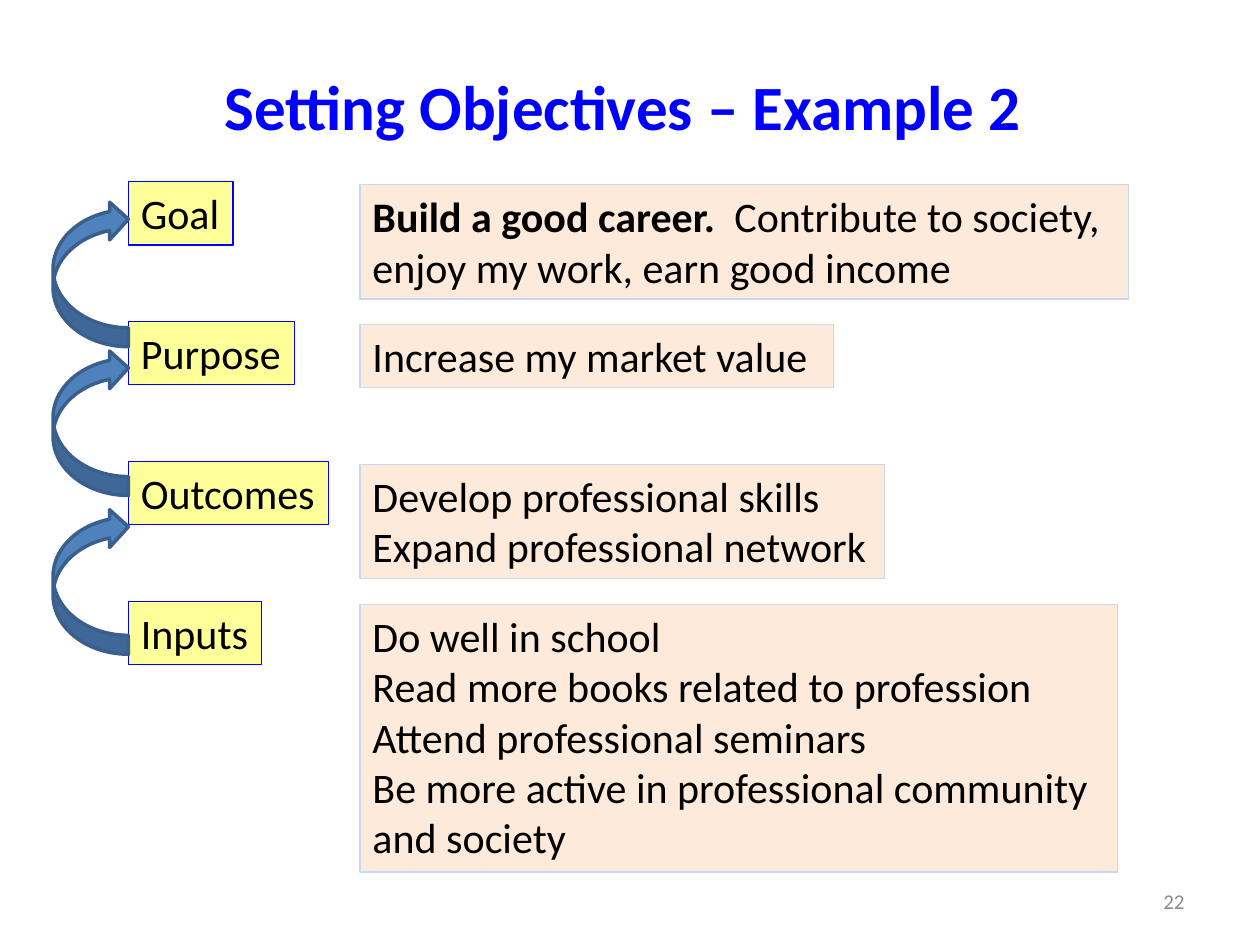
from pptx import Presentation
from pptx import util as u
from pptx.dml.color import RGBColor
from pptx.enum import shapes, text

COLORS = {
    "title": "0000FF", "body": "000000", "number": "8C8C8C",
    "label": "FFFF99", "label_line": "0000FF",
    "detail": "FDEADA", "detail_line": "C6D9F1",
    "arrow": "4F81BD", "arrow_line": "3A5F8C",
}
FIRST_ROW, ROW_PITCH = 3.66, 2.82
LABEL_LEFT, DETAIL_LEFT, DETAIL_DROP = 2.59, 7.26, 0.06
ARROW_LEFT, ARROW_WIDTH, ARROW_HEIGHT = 1.07, 1.52, 2.95
ARROW_TOPS = (4.04, 7.04, 10.24)

# label, label width, detail width, detail lines made of (words, bold) runs
LEVELS = [
    ("Goal", 2.11, 15.49, [
        [("Build a good career.  ", True), ("Contribute to society,", False)],
        [("enjoy my work, earn good income", False)]]),
    ("Purpose", 3.35, 9.55, [[("Increase my market value", False)]]),
    ("Outcomes", 4.04, 10.57, [
        [("Develop professional skills", False)],
        [("Expand professional network", False)]]),
    ("Inputs", 2.69, 15.27, [
        [("Do well in school", False)],
        [("Read more books related to profession", False)],
        [("Attend professional seminars", False)],
        [("Be more active in professional community", False)],
        [("and society", False)]]),
]


def rgb(name):
    return RGBColor.from_string(COLORS[name])


def write(frame, lines, size=24, color="body", align=text.PP_ALIGN.LEFT,
          anchor=text.MSO_ANCHOR.TOP):
    """Fill a text frame with lines, each a list of (words, bold) runs."""
    frame.word_wrap = True
    frame.auto_size = text.MSO_AUTO_SIZE.NONE
    frame.vertical_anchor = anchor
    for index, line in enumerate(lines):
        paragraph = frame.add_paragraph() if index else frame.paragraphs[0]
        paragraph.alignment = align
        for words, bold in line:
            run = paragraph.add_run()
            run.text = words
            run.font.name = "Calibri"
            run.font.size = u.Pt(size)
            run.font.bold = bold
            run.font.color.rgb = rgb(color)


def add_filled(slide, preset, left, top, width, height, style, line_width):
    figure = slide.shapes.add_shape(
        preset, u.Cm(left), u.Cm(top), u.Cm(width), u.Cm(height))
    figure.shadow.inherit = False
    figure.fill.solid()
    figure.fill.fore_color.rgb = rgb(style)
    figure.line.color.rgb = rgb(style + "_line")
    figure.line.width = u.Pt(line_width)
    return figure


def add_box(slide, left, top, width, lines, style):
    """Add a box as tall as its lines."""
    box = add_filled(slide, shapes.MSO_SHAPE.RECTANGLE, left, top, width,
                     0.25 + 1.03 * len(lines), style, 0.75)
    box.text_frame.margin_right = 0
    write(box.text_frame, lines)


def add_upward_arrow(slide, top):
    arrow = add_filled(slide, shapes.MSO_SHAPE.CURVED_RIGHT_ARROW, ARROW_LEFT,
                       top, ARROW_WIDTH, ARROW_HEIGHT, "arrow", 2)
    arrow._element.spPr.xfrm.set("flipV", "1")


def add_title(slide, words):
    title = slide.shapes.title
    title.left, title.top = u.Cm(1.27), u.Cm(0.53)
    title.width, title.height = u.Cm(22.86), u.Cm(3.18)
    write(title.text_frame, [[(words, True)]], size=36, color="title",
          align=text.PP_ALIGN.CENTER, anchor=text.MSO_ANCHOR.MIDDLE)


def add_page_number(slide, number):
    box = slide.shapes.add_textbox(
        u.Cm(18.21), u.Cm(17.65), u.Cm(5.92), u.Cm(1.02))
    write(box.text_frame, [[(number, False)]], size=12, color="number",
          align=text.PP_ALIGN.RIGHT, anchor=text.MSO_ANCHOR.MIDDLE)


def main():
    deck = Presentation()
    deck.slide_width, deck.slide_height = u.Cm(25.4), u.Cm(19.05)
    slide = deck.slides.add_slide(deck.slide_layouts[5])
    add_title(slide, "Setting Objectives – Example 2 ")
    tops = [FIRST_ROW + ROW_PITCH * row for row in range(len(LEVELS))]
    for top, (label, label_width, _, _) in zip(tops, LEVELS):
        add_box(slide, LABEL_LEFT, top, label_width, [[(label, False)]], "label")
    for top in ARROW_TOPS:
        add_upward_arrow(slide, top)
    for top, (_, _, detail_width, details) in zip(tops, LEVELS):
        add_box(slide, DETAIL_LEFT, top + DETAIL_DROP, detail_width, details,
                "detail")
    add_page_number(slide, "22")
    deck.save("out.pptx")


if __name__ == "__main__":
    main()
